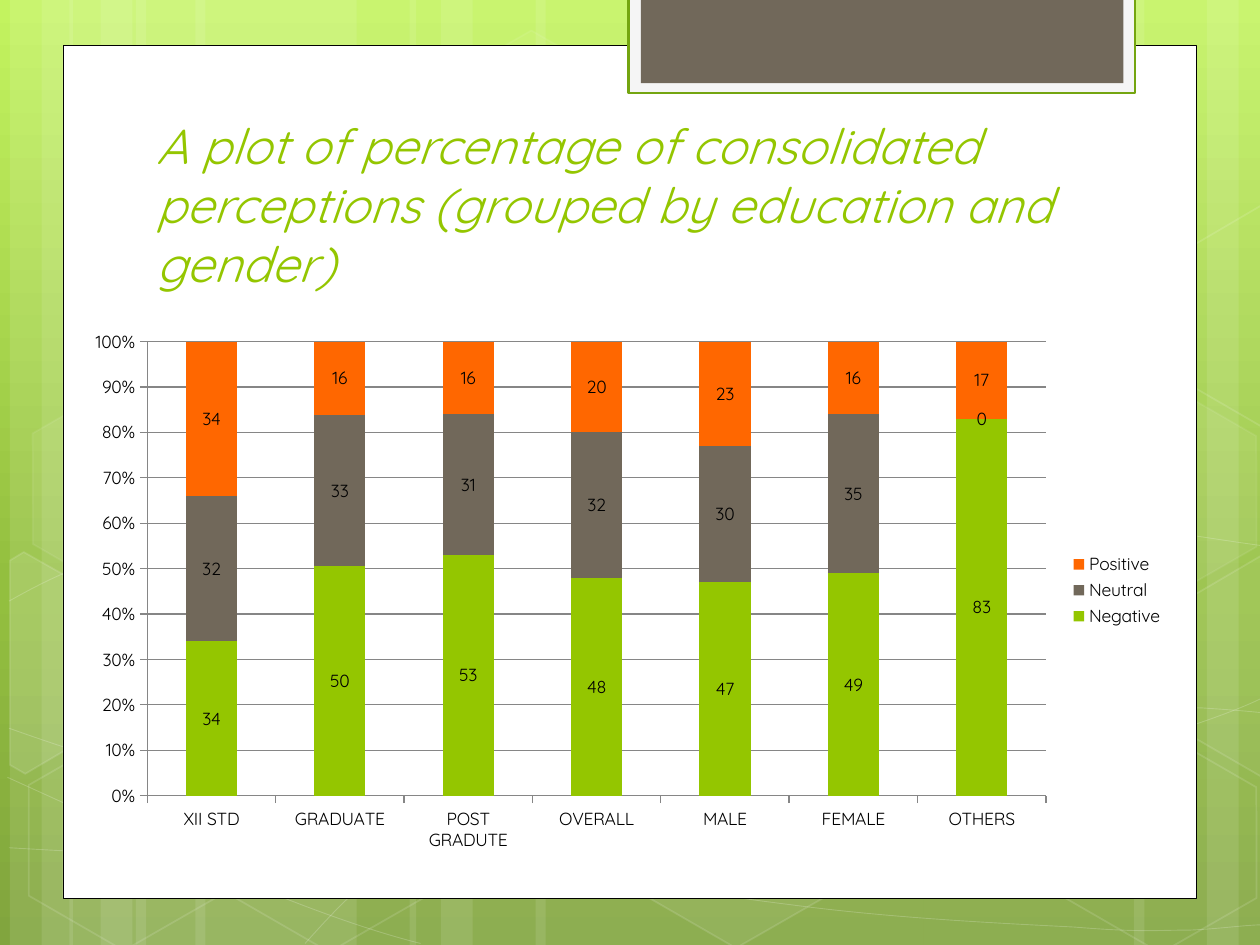
from copy import deepcopy

from lxml.etree import SubElement
from pptx import Presentation
from pptx.chart.data import CategoryChartData
from pptx.dml.color import RGBColor
from pptx.enum.chart import XL_CHART_TYPE as ChartType
from pptx.enum.chart import XL_LABEL_POSITION as LabelPosition
from pptx.enum.chart import XL_LEGEND_POSITION as LegendPosition
from pptx.enum.chart import XL_TICK_MARK as TickMark
from pptx.enum.shapes import MSO_SHAPE as Shape
from pptx.enum.text import MSO_ANCHOR as Anchor
from pptx.enum.text import MSO_AUTO_SIZE as AutoSize
from pptx.enum.text import PP_ALIGN as Align
from pptx.oxml import parse_xml
from pptx.oxml.ns import nsdecls, qn
from pptx.util import Cm, Pt

FONT = "Quicksand"
COLORS = {
    "sky": "C3F35F", "leaf": "93BF3F", "moss": "81A53E", "white": "FFFFFF",
    "black": "000000", "tab": "F5F5F5", "tab_edge": "74A510", "grid": "868686",
    "green": "94C600", "brown": "71685A", "orange": "FF6700",
}
STRIPES = [
    (2.74, 4.45), (0.2, 1.27), (0.84, 2.11), (3.94, 4.45), (1.4, 1.27), (2.03, 2.11),
    (18.62, 4.45), (24.33, 1.27), (22.86, 2.11), (10.8, 7.82), (8.26, 1.27), (8.89, 2.11),
]
CURVES = [
    [(0.18, 17.09), (1.55, 17.17), (2.92, 17.25), (4.83, 17.22), (6.73, 17.2),
     (9.09, 17.15), (11.63, 16.89), (14.17, 16.64), (17.78, 16.15), (20.12, 15.67),
     (22.43, 15.19), (24.82, 14.43), (25.58, 14)],
    [(0.18, 12.12), (0.91, 11.71), (1.65, 11.33), (3.07, 10.95), (4.52, 10.57),
     (6.58, 10.01), (8.81, 9.83), (11.07, 9.65), (13.82, 9.63), (16.61, 9.83),
     (19.41, 10.03), (24.05, 10.82), (25.58, 11.02)],
    [(0.15, 15.67), (3.23, 17.07), (6.27, 18.47), (8.48, 19.02)],
    [(0.18, 14.68), (0.97, 14.96), (1.78, 15.24), (3.25, 15.65), (4.72, 16.03),
     (6.93, 16.66), (9.07, 17.09), (11.18, 17.53), (13.84, 17.98), (15.95, 18.24),
     (18.06, 18.52), (20.32, 18.62), (21.67, 18.69), (22.99, 18.8), (23.34, 18.75),
     (24, 18.75), (24.66, 18.72), (25.12, 18.64), (25.58, 18.64)],
    [(6.15, 19.02), (6.6, 18.52), (7.06, 18.01), (7.67, 17.55), (8.28, 17.09),
     (9.14, 16.59), (9.86, 16.23), (10.57, 15.88), (11, 15.72), (11.94, 15.47),
     (12.85, 15.21), (14.55, 14.86), (15.44, 14.68), (16.36, 14.5), (16.48, 14.45),
     (17.27, 14.45), (18.06, 14.38), (19.3, 14.3), (20.17, 14.27), (21.06, 14.25),
     (22.5, 14.27), (22.5, 14.27), (22.5, 14.27), (24.21, 14.27), (24.21, 14.27),
     (24.66, 14.3), (25.1, 14.33), (25.55, 14.38)],
]
HEXAGONS = [
    (8.48, 0.91, 4, 8), (12.62, 14.96, 6, 12), (0.28, 15.01, 0, 12), (0.36, 7.92, 7, 8),
    (4.42, 15.04, 0, 12), (19.13, 11.51, 10, 12), (21.18, 15.06, 0, 12),
    (21.18, 7.98, 7, 8),
]
CUT_HEXAGONS = [
    ([(0.2, 11.3), (0.48, 11.13), (2.44, 12.24), (2.41, 14.48), (0.51, 15.6),
      (0.2, 15.42)], 10),
    ([(23.52, 12.32), (25.43, 11.2), (25.63, 11.33), (25.63, 15.57), (25.45, 15.67),
      (23.52, 14.55)], 4),
    ([(23.52, 5.26), (25.43, 4.14), (25.65, 4.27), (25.63, 8.51), (25.45, 8.61),
      (23.52, 7.49)], 0),
]
CATEGORIES = ["XII STD", "GRADUATE", "POST GRADUTE", "OVERALL", "MALE", "FEMALE", "OTHERS"]
SERIES = [
    ("Negative", "green", [34, 50, 53, 48, 47, 49, 83]),
    ("Neutral", "brown", [32, 33, 31, 32, 30, 35, 0]),
    ("Positive", "orange", [34, 16, 16, 20, 23, 16, 17]),
]


def rgb(name):
    """Return the named colour."""
    return RGBColor.from_string(COLORS[name])


def paint(fill, name, opacity=100):
    """Apply a solid colour, see-through when opacity is below 100."""
    if not opacity:
        fill.background()
        return
    fill.solid()
    fill.fore_color.rgb = rgb(name)
    if opacity < 100:
        for color in fill._xPr.iter(qn("a:srgbClr")):
            SubElement(color, qn("a:alpha"), val=str(opacity * 1000))


def style(shape, fill, opacity=100, line=None, width=0, line_opacity=100):
    """Set the fill and outline of a shape and drop its shadow."""
    shape.shadow.inherit = False
    paint(shape.fill, fill, opacity)
    paint(shape.line.fill, line, line_opacity if line else 0)
    if line:
        shape.line.width = Pt(width)


def add_box(page, kind, left, top, width, height):
    """Add a preset shape measured in centimetres."""
    return page.shapes.add_shape(kind, Cm(left), Cm(top), Cm(width), Cm(height))


def add_outline(page, points, close):
    """Add a freeform through points given in centimetres."""
    first, *rest = [(round(x * 100), round(y * 100)) for x, y in points]
    builder = page.shapes.build_freeform(*first, scale=Cm(0.01))
    builder.add_line_segments(rest, close=close)
    return builder.convert_to_shape()


def add_curve(page, knots):
    """Add a chain of cubic Bezier segments."""
    curve = add_outline(page, knots, False)
    lines = list(curve._element.iter(qn("a:lnTo")))
    for start in range(0, len(lines), 3):
        bend = lines[start]
        bend.tag = qn("a:cubicBezTo")
        for line in lines[start + 1:start + 3]:
            bend.append(line[0])
            line.getparent().remove(line)
    return curve


def add_background(page):
    """Paint the gradient and the translucent pattern over it."""
    fill = page.background.fill
    fill.gradient()
    fill.gradient_angle = 270
    first = fill.gradient_stops[0]._gs
    first.addnext(deepcopy(first))
    for stop, (place, name) in zip(fill.gradient_stops,
                                   [(0, "sky"), (0.62, "leaf"), (1, "moss")]):
        stop.position = place
        stop.color.rgb = rgb(name)
    for left, width in STRIPES:
        style(add_box(page, Shape.RECTANGLE, left, 0, width, 19.05), "white", 10)
    for knots in CURVES:
        style(add_curve(page, knots), "white", 0, "white", 0.5, 20)
    for left, top, opacity, line_opacity in HEXAGONS:
        hexagon = add_box(page, Shape.HEXAGON, left, top, 4.45, 3.86)
        hexagon.adjustments[0] = 0.29
        hexagon.rotation = 30
        style(hexagon, "white", opacity, "white", 1, line_opacity)
    for points, opacity in CUT_HEXAGONS:
        style(add_outline(page, points, True), "white", opacity, "white", 1, 12)


def add_card(page):
    """Add the white card and the tab hanging from the top edge."""
    style(add_box(page, Shape.RECTANGLE, 1.27, 0.91, 22.86, 17.2), "white", 100, "black", 0.5)
    style(add_box(page, Shape.RECTANGLE, 12.67, -0.05, 10.21, 1.93), "tab", 100, "tab_edge", 1.25)
    style(add_box(page, Shape.RECTANGLE, 12.92, -0.05, 9.73, 1.73), "brown")


def add_title(page, text):
    """Fill the title placeholder and bring it in front of the card."""
    title = page.shapes.title
    title.left, title.top, title.width, title.height = Cm(2.9), Cm(2.84), Cm(19.51), Cm(3.18)
    page.shapes._spTree.append(title._element)
    frame = title.text_frame
    frame.text = text
    frame.word_wrap = True
    frame.auto_size = AutoSize.NONE
    frame.vertical_anchor = Anchor.BOTTOM
    para = frame.paragraphs[0]
    para.alignment = Align.LEFT
    para.font.name, para.font.size, para.font.italic = FONT, Pt(28), True
    para.font.color.rgb = rgb("green")


def add_perception_chart(page):
    """Add the stacked percentage columns."""
    data = CategoryChartData()
    data.categories = CATEGORIES
    for name, _, values in SERIES:
        data.add_series(name, values)
    chart = page.shapes.add_chart(ChartType.COLUMN_STACKED_100, Cm(1.48), Cm(6.45),
                                  Cm(22.23), Cm(10.9), data).chart
    chart.has_title = False
    chart.font.name, chart.font.size = FONT, Pt(10)
    chart.font.color.rgb = rgb("black")
    chart.has_legend = True
    chart.legend.position = LegendPosition.RIGHT
    chart.legend.include_in_layout = False
    for axis in (chart.category_axis, chart.value_axis):
        axis.major_tick_mark = TickMark.OUTSIDE
        axis.minor_tick_mark = TickMark.NONE
        axis.format.line.color.rgb = rgb("grid")
    values = chart.value_axis
    values.major_gridlines.format.line.color.rgb = rgb("grid")
    values.minimum_scale, values.maximum_scale, values.major_unit = 0, 1, 0.1
    values.tick_labels.number_format = "0%"
    values.tick_labels.number_format_is_linked = False
    plot = chart.plots[0]
    plot.gap_width, plot.overlap, plot.vary_by_categories = 150, 100, False
    for series, (_, color, _) in zip(plot.series, SERIES):
        paint(series.format.fill, color)
        series.data_labels.show_value = True
        series.data_labels.position = LabelPosition.CENTER
    area = chart._chartSpace.chart.plotArea
    for old in area.findall(qn("c:layout")):
        area.remove(old)
    sizes = "".join(f'<c:{tag} val="{value}"/>' for tag, value in [
        ("layoutTarget", "inner"), ("xMode", "edge"), ("yMode", "edge"),
        ("x", 0.067), ("y", 0.04), ("w", 0.815), ("h", 0.84)])
    area.insert(0, parse_xml(f'<c:layout {nsdecls("c")}><c:manualLayout>{sizes}'
                             '</c:manualLayout></c:layout>'))


def main():
    """Build and save the slide."""
    deck = Presentation()
    deck.slide_width, deck.slide_height = Cm(25.4), Cm(19.05)
    page = deck.slides.add_slide(deck.slide_layouts[5])
    add_background(page)
    add_card(page)
    add_title(page, "A plot of percentage of consolidated perceptions "
                    "(grouped by education and gender)")
    add_perception_chart(page)
    deck.save("out.pptx")


if __name__ == "__main__":
    main()
